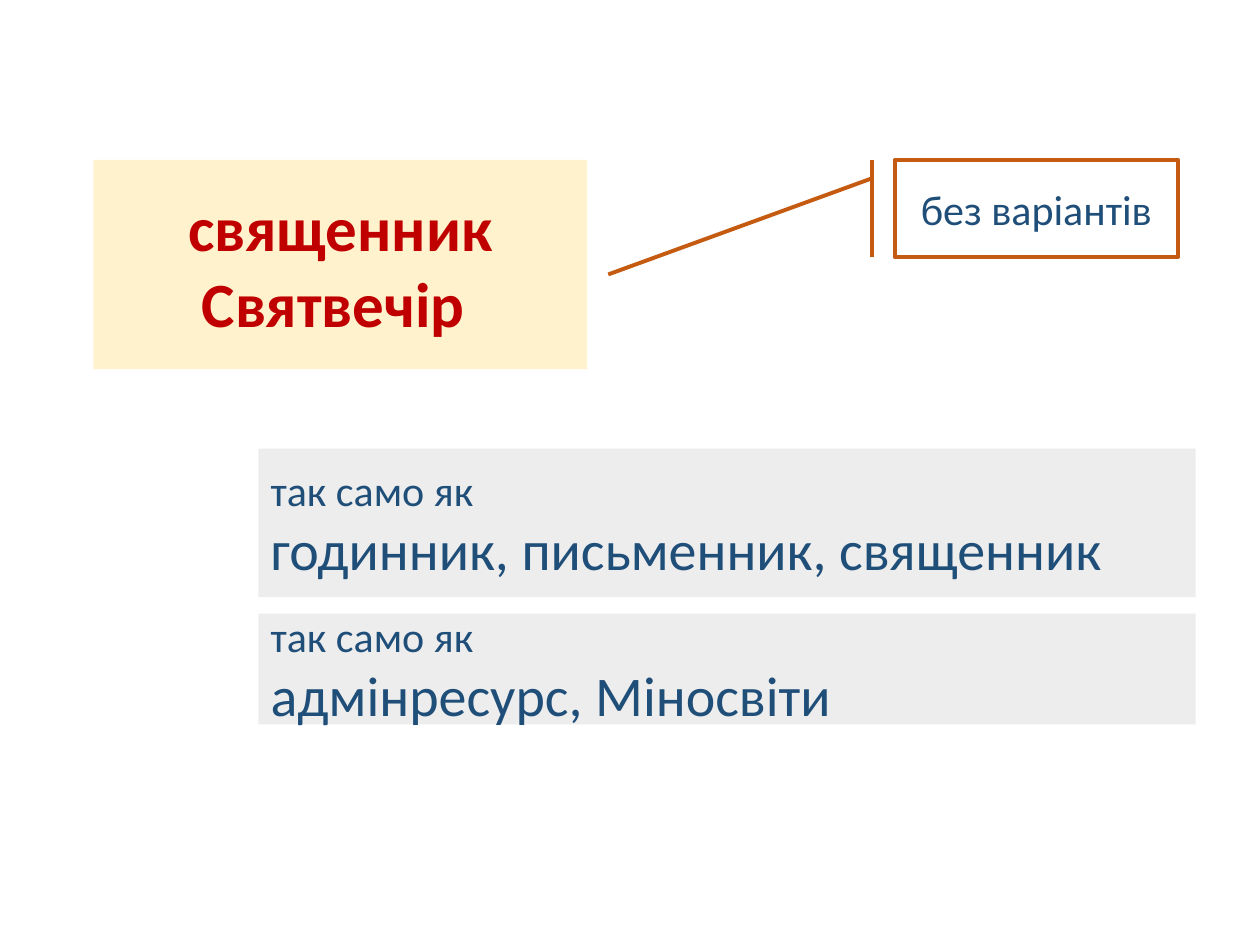
from pptx import Presentation
from pptx import util as u
from pptx.dml import color
from pptx.enum import shapes, text

WIDTH, HEIGHT = u.Inches(10), u.Inches(7.5)
COLUMN, ROW = WIDTH / 100, HEIGHT / 100
FONT = "Calibri"
BLUE, RED, ORANGE = "1F4E79", "C00000", "C55A11"
CREAM, GREY = "FFF2CC", "EDEDED"
TOP_ROW = 16.93


def paint(target, value):
    target.rgb = color.RGBColor.from_string(value)


def add_box(page, kind, left, top, width, height, fill=None, line=None):
    box = page.shapes.add_shape(
        kind, round(left * COLUMN), round(top * ROW),
        round(width * COLUMN), round(height * ROW))
    box.shadow.inherit = False
    if fill:
        box.fill.solid()
        paint(box.fill.fore_color, fill)
    else:
        box.fill.background()
    if line:
        paint(box.line.color, line)
        box.line.width = u.Pt(2.25)
    else:
        box.line.fill.background()
    return box


def write(box, lines, sizes, ink, align, bold=False):
    frame = box.text_frame
    frame.word_wrap = True
    frame.vertical_anchor = text.MSO_ANCHOR.MIDDLE
    frame.text = "\n".join(lines)
    for para, size in zip(frame.paragraphs, sizes):
        para.alignment = align
        for span in para.runs:
            span.font.name = FONT
            span.font.size = u.Pt(size)
            span.font.bold = bold
            paint(span.font.color, ink)


def add_headwords(page):
    box = add_box(page, shapes.MSO_SHAPE.RECTANGLE,
                  7.4, TOP_ROW, 39.2, 22.13, fill=CREAM)
    write(box, ["священник", "Святвечір "], [36, 36], RED,
          text.PP_ALIGN.CENTER, bold=True)


def add_analogy(page, top, height, examples):
    box = add_box(page, shapes.MSO_SHAPE.RECTANGLE,
                  20.5, top, 74.4, height, fill=GREY)
    write(box, ["так само як", examples], [24, 32], BLUE, text.PP_ALIGN.LEFT)


def add_callout(page):
    kind = shapes.MSO_SHAPE.LINE_CALLOUT_1_BORDER_AND_ACCENT_BAR
    box = add_box(page, kind, 71, TOP_ROW, 22.5, 10.27, line=ORANGE)
    for index, share in enumerate([0.19, -0.08, 1.18, -1.01]):
        box.adjustments[index] = share
    write(box, ["без варіантів"], [24], BLUE, text.PP_ALIGN.CENTER)


def main():
    deck = Presentation()
    deck.slide_width, deck.slide_height = WIDTH, HEIGHT
    page = deck.slides.add_slide(deck.slide_layouts[6])
    add_headwords(page)
    add_analogy(page, 47.47, 15.73, "годинник, письменник, священник")
    add_callout(page)
    add_analogy(page, 64.93, 11.73, "адмінресурс, Міносвіти")
    deck.save("out.pptx")


if __name__ == "__main__":
    main()
